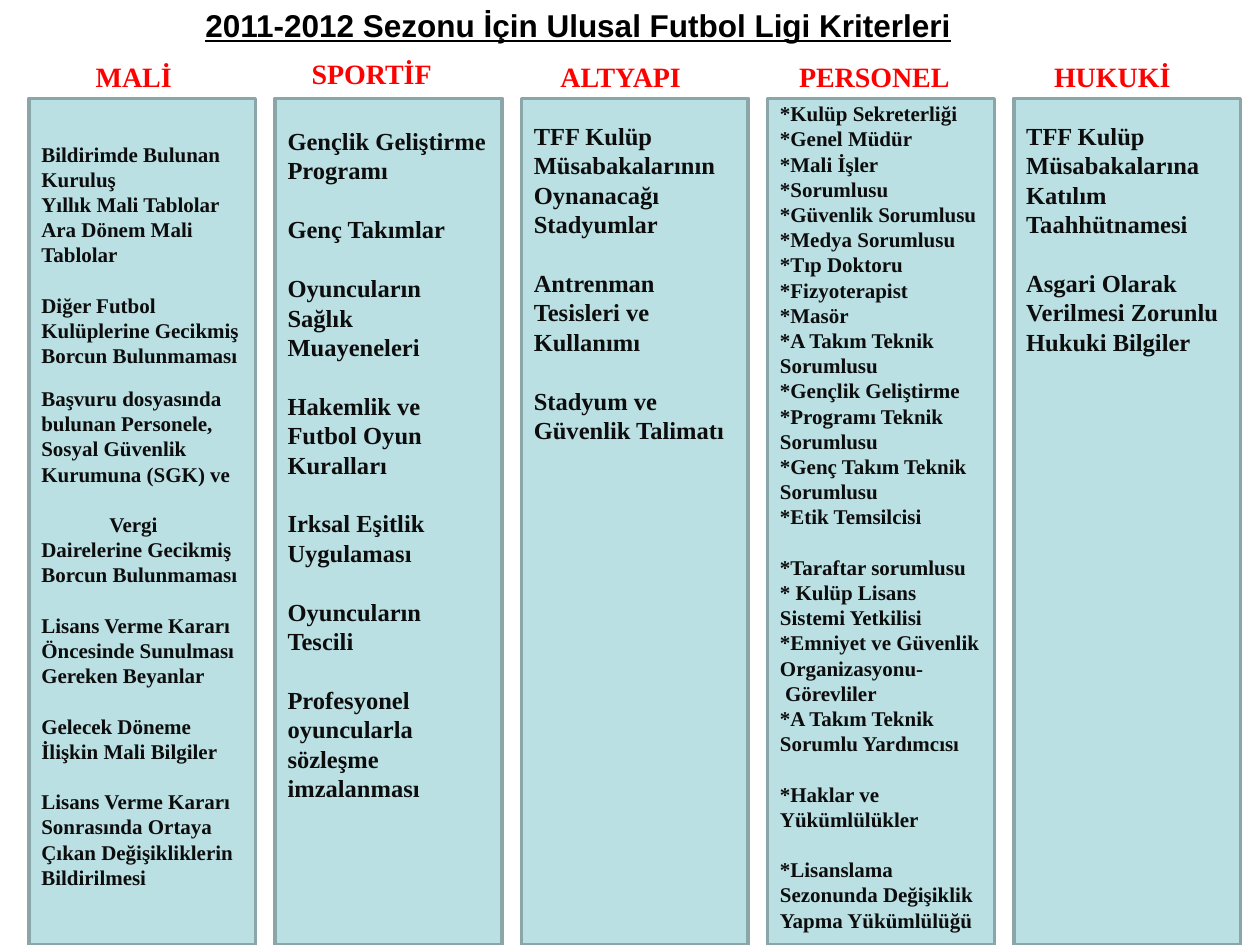
from pptx import Presentation
from pptx import util as u
from pptx.dml.color import RGBColor
from pptx.enum import shapes, text

THEME = {
    "panel": RGBColor.from_string("BBE0E3"),
    "border": RGBColor.from_string("8AA6A8"),
    "title": dict(name="Arial", size=u.Pt(18), bold=True, underline=True,
                  color="000000"),
    "heading": dict(name="Times New Roman", size=u.Pt(16), bold=True, color="FF0000"),
    "body": dict(name="Times New Roman", bold=True, color="0D0D0D"),
    "line": 1.2,  # height of a text line as a share of the type size
}

TITLE = "2011-2012 Sezonu İçin Ulusal Futbol Ligi Kriterleri"

# Each group is a list of paragraphs; one empty line's height parts the groups.
COLUMNS = [
    dict(heading="MALİ", indent=0.35, lift=0, size=12, top=0.34, groups=[
        ["Bildirimde Bulunan Kuruluş", "Yıllık Mali Tablolar",
         "Ara Dönem Mali Tablolar"],
        ["Diğer Futbol Kulüplerine Gecikmiş Borcun Bulunmaması"],
        ["Başvuru dosyasında bulunan Personele, Sosyal Güvenlik Kurumuna (SGK) ve"],
        ["Vergi Dairelerine Gecikmiş Borcun Bulunmaması"],
        ["Lisans Verme Kararı Öncesinde Sunulması Gereken Beyanlar"],
        ["Gelecek Döneme İlişkin Mali Bilgiler"],
        ["Lisans Verme Kararı Sonrasında Ortaya Çıkan Değişikliklerin Bildirilmesi"],
    ]),
    dict(heading="SPORTİF", indent=0.11, lift=0.02, size=14, top=0.22, groups=[
        ["Gençlik Geliştirme Programı"],
        ["Genç Takımlar"],
        ["Oyuncuların Sağlık Muayeneleri"],
        ["Hakemlik ve Futbol Oyun Kuralları"],
        ["Irksal Eşitlik Uygulaması"],
        ["Oyuncuların Tescili"],
        ["Profesyonel oyuncularla sözleşme imzalanması"],
    ]),
    dict(heading="ALTYAPI", indent=0.13, lift=0, size=14, top=0.18, groups=[
        ["TFF Kulüp Müsabakalarının Oynanacağı Stadyumlar"],
        ["Antrenman Tesisleri ve Kullanımı"],
        ["Stadyum ve Güvenlik Talimatı"],
    ]),
    dict(heading="PERSONEL", indent=0.07, lift=0, size=12, top=0.02, groups=[
        ["*Kulüp Sekreterliği", "*Genel Müdür", "*Mali İşler *Sorumlusu",
         "*Güvenlik Sorumlusu", "*Medya Sorumlusu", "*Tıp Doktoru",
         "*Fizyoterapist", "*Masör", "*A Takım Teknik Sorumlusu",
         "*Gençlik Geliştirme *Programı Teknik Sorumlusu",
         "*Genç Takım Teknik Sorumlusu", "*Etik Temsilcisi"],
        ["*Taraftar sorumlusu", "* Kulüp Lisans\vSistemi Yetkilisi",
         "*Emniyet ve Güvenlik Organizasyonu-", "Görevliler",
         "*A Takım Teknik Sorumlu Yardımcısı"],
        ["*Haklar ve Yükümlülükler"],
        ["*Lisanslama Sezonunda Değişiklik Yapma Yükümlülüğü"],
    ]),
    dict(heading="HUKUKİ", indent=0.14, lift=0, size=14, top=0.18, groups=[
        ["TFF Kulüp Müsabakalarına Katılım Taahhütnamesi"],
        ["Asgari Olarak Verilmesi Zorunlu Hukuki Bilgiler"],
    ]),
]
FIRST_LINE_INDENT = {"Vergi": 0.54, "Görevliler": 0.04}
GAP_BEFORE = {"Başvuru": 10}

SLIDE_W, SLIDE_H = 10, 7.5
LEFT, PITCH, PANEL_W, PANEL_TOP = 0.23, 1.954, 1.8, 0.78


def box(x, y, w, h):
    return [u.Inches(v) for v in (x, y, w, h)]


def write(p, words, style, **extra):
    p.text = words
    p.alignment = text.PP_ALIGN.LEFT
    for r in p.runs:
        for key, value in {**style, **extra}.items():
            if key == "color":
                r.font.color.rgb = RGBColor.from_string(value)
            else:
                setattr(r.font, key, value)


def set_frame(tf, **values):
    base = dict(word_wrap=True, vertical_anchor=text.MSO_ANCHOR.TOP,
                margin_left=u.Inches(0.1), margin_right=u.Inches(0.1),
                margin_top=u.Inches(0.05), margin_bottom=u.Inches(0.05))
    for key, value in {**base, **values}.items():
        setattr(tf, key, value)


def add_panel(s, x, col):
    sp = s.shapes.add_shape(shapes.MSO_SHAPE.RECTANGLE,
                            *box(x, PANEL_TOP, PANEL_W, SLIDE_H - PANEL_TOP))
    sp.shadow.inherit = False
    sp.fill.solid()
    sp.fill.fore_color.rgb = THEME["panel"]
    sp.line.color.rgb = THEME["border"]
    sp.line.width = u.Pt(2)
    tf = sp.text_frame
    set_frame(tf, margin_top=u.Inches(col["top"]), margin_bottom=0)
    line = u.Pt(col["size"] * THEME["line"])
    paragraphs = [(words, g > 0 and i == 0)
                  for g, group in enumerate(col["groups"])
                  for i, words in enumerate(group)]
    for n, (words, starts_group) in enumerate(paragraphs):
        p = tf.paragraphs[0] if n == 0 else tf.add_paragraph()
        write(p, words, THEME["body"], size=u.Pt(col["size"]))
        p.line_spacing = line
        first = words.split()[0]
        if starts_group:
            p.space_before = u.Pt(GAP_BEFORE[first]) if first in GAP_BEFORE else line
        if first in FIRST_LINE_INDENT:
            p._p.get_or_add_pPr().set("indent", str(u.Inches(FIRST_LINE_INDENT[first])))


def add_heading(s, x, col):
    sp = s.shapes.add_textbox(*box(x + 0.08, 0.42 - col["lift"], 1.64, 0.37))
    set_frame(sp.text_frame, margin_left=u.Inches(0.1 + col["indent"]), margin_right=0)
    write(sp.text_frame.paragraphs[0], col["heading"], THEME["heading"])


def main():
    prs = Presentation()
    prs.slide_width, prs.slide_height = u.Inches(SLIDE_W), u.Inches(SLIDE_H)
    s = prs.slides.add_slide(prs.slide_layouts[5])
    title = s.shapes.title
    title.left, title.top, title.width, title.height = box(1.53, 0, 6.83, 0.4)
    set_frame(title.text_frame, auto_size=text.MSO_AUTO_SIZE.NONE)
    write(title.text_frame.paragraphs[0], TITLE, THEME["title"])
    for i, col in enumerate(COLUMNS):
        x = LEFT + i * PITCH
        add_panel(s, x, col)
        add_heading(s, x, col)
    prs.save("out.pptx")


if __name__ == "__main__":
    main()
